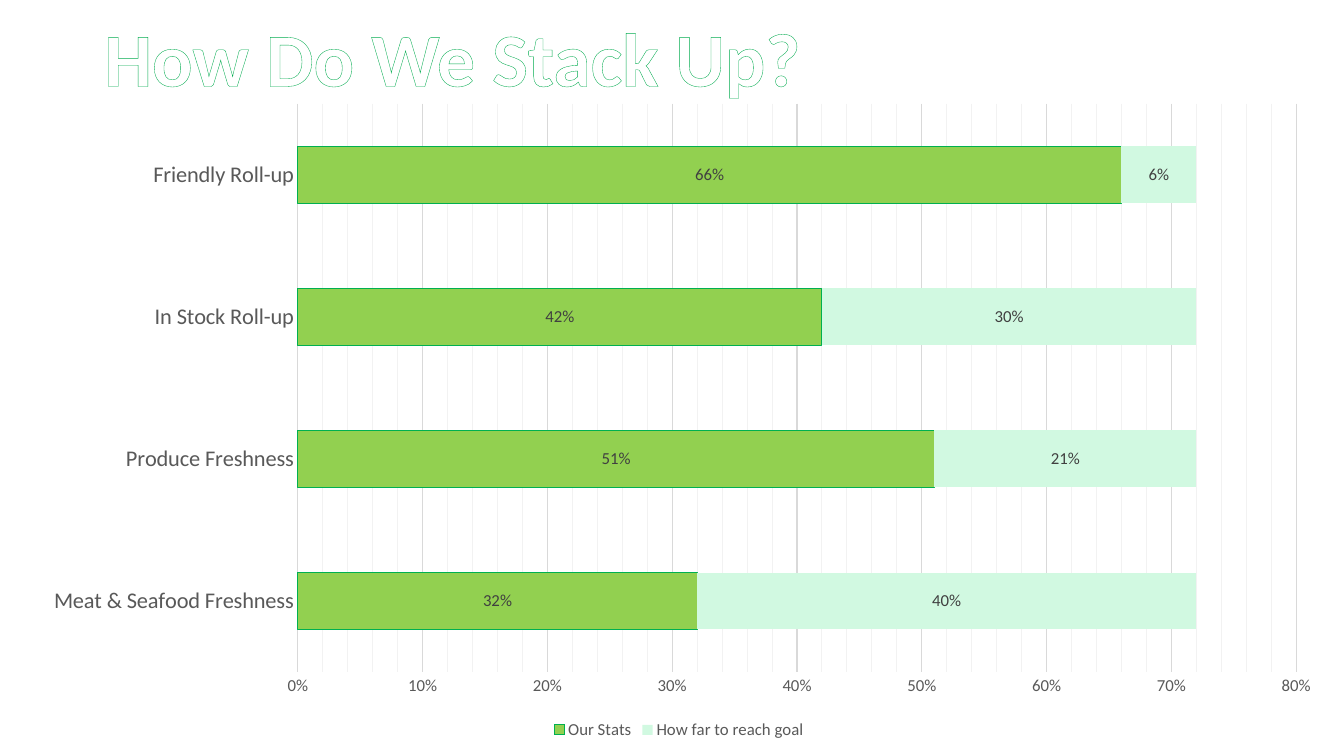
from lxml import etree
from pptx import Presentation
from pptx.chart.data import CategoryChartData
from pptx.dml.color import RGBColor
from pptx.enum.chart import XL_CHART_TYPE, XL_LABEL_POSITION, XL_LEGEND_POSITION, XL_TICK_MARK
from pptx.enum.text import MSO_ANCHOR
from pptx.oxml import parse_xml
from pptx.oxml.ns import nsdecls
from pptx.util import Pt

STACKED = XL_CHART_TYPE.BAR_STACKED
CENTER = XL_LABEL_POSITION.CENTER
BOTTOM = XL_LEGEND_POSITION.BOTTOM
NO_TICK = XL_TICK_MARK.NONE
MIDDLE = MSO_ANCHOR.MIDDLE

CATS = ["Meat & Seafood Freshness", "Produce Freshness", "In Stock Roll-up", "Friendly Roll-up"]
# name, values, fill, line
SERIES = [
    ("Our Stats", (0.32, 0.51, 0.42, 0.66), "92D050", "00B050"),
    ("How far to reach goal", (0.4, 0.21, 0.3, 0.06), "D1F9E1", None),
]
PLOT = {"x": 0.21, "y": 0.02, "w": 0.76, "h": 0.87}


def color(text):
    return RGBColor.from_string(text)


def solid(text):
    return f'<a:solidFill><a:srgbClr val="{text}"/></a:solidFill>'


class Deck:
    font = "Calibri"
    gray = "595959"
    dark = "404040"
    grid = "D9D9D9"
    faint = "F2F2F2"

    def __init__(self, slide):
        self.slide = slide

    def style(self, font, size, tint):
        font.name = self.font
        font.size = Pt(size)
        font.color.rgb = color(tint)

    def title(self, box, text, size, edge, front, back):
        """Add bold text with an outline and a trellis fill."""
        frame = self.slide.shapes.add_textbox(*map(Pt, box)).text_frame
        frame.word_wrap = True
        frame.vertical_anchor = MIDDLE
        para = frame.paragraphs[0]
        para.line_spacing = 0.9
        run = para.add_run()
        run.text = text
        run.font.name = self.font
        run.font.size = Pt(size)
        run.font.bold = True
        props = run.font._element
        line = f'<a:ln {nsdecls("a")} w="{Pt(1)}">{solid(edge)}</a:ln>'
        fill = (f'<a:pattFill {nsdecls("a")} prst="trellis">'
                f'<a:fgClr><a:srgbClr val="{front}"/></a:fgClr>'
                f'<a:bgClr><a:srgbClr val="{back}"/></a:bgClr></a:pattFill>')
        for spot, xml in enumerate((line, fill)):
            props.insert(spot, parse_xml(xml))

    def chart(self, box, cats, series, plot):
        data = CategoryChartData(number_format="0%")
        data.categories = cats
        for name, vals, *_ in series:
            data.add_series(name, vals)
        chart = self.slide.shapes.add_chart(STACKED, *map(Pt, box), data).chart
        self.style(chart.font, 10, "000000")
        chart.has_title = False
        chart.has_legend = True
        chart.legend.position = BOTTOM
        chart.legend.include_in_layout = False
        self.style(chart.legend.font, 12, self.gray)
        self.bars(chart.plots[0], series)
        self.axes(chart)
        self.place(chart, plot)

    def bars(self, plot, series):
        plot.gap_width = 150
        plot.overlap = 100
        plot.vary_by_categories = False
        for bar, (_, _, fill, line) in zip(plot.series, series):
            bar.invert_if_negative = False
            bar.format.fill.solid()
            bar.format.fill.fore_color.rgb = color(fill)
            if line:
                bar.format.line.color.rgb = color(line)
                bar.format.line.width = Pt(0.75)
            else:
                bar.format.line.fill.background()
            labels = bar.data_labels
            labels.show_value = True
            labels.position = CENTER
            labels.number_format = "0%"
            labels.number_format_is_linked = False
            self.style(labels.font, 12, self.dark)

    def axes(self, chart):
        for axis, size in ((chart.category_axis, 16), (chart.value_axis, 12)):
            axis.major_tick_mark = axis.minor_tick_mark = NO_TICK
            axis.format.line.fill.background()
            self.style(axis.tick_labels.font, size, self.gray)
        axis = chart.value_axis
        axis.minimum_scale, axis.maximum_scale = 0, 0.8
        axis.major_unit, axis.minor_unit = 0.1, 0.02
        axis.tick_labels.number_format = "0%"
        axis.tick_labels.number_format_is_linked = False
        axis.has_major_gridlines = axis.has_minor_gridlines = True
        line = axis.major_gridlines.format.line
        line.color.rgb = color(self.grid)
        line.width = Pt(0.75)
        minor = chart.element.xpath(".//c:minorGridlines")[0]
        minor.append(parse_xml(
            f'<c:spPr {nsdecls("c", "a")}><a:ln w="{Pt(0.75)}">{solid(self.faint)}</a:ln></c:spPr>'))

    def place(self, chart, plot):
        """Fix the inner plot area as shares of the chart."""
        area = chart.element.xpath(".//c:plotArea")[0]
        for old in area.xpath("./c:layout"):
            area.remove(old)
        layout = parse_xml(
            f'<c:layout {nsdecls("c")}><c:manualLayout><c:layoutTarget val="inner"/>'
            '<c:xMode val="edge"/><c:yMode val="edge"/></c:manualLayout></c:layout>')
        for key, share in plot.items():
            tag = layout[0][0].tag.replace("layoutTarget", key)
            etree.SubElement(layout[0], tag).set("val", str(share))
        area.insert(0, layout)


def main():
    show = Presentation()
    show.slide_width, show.slide_height = Pt(960), Pt(540)
    deck = Deck(show.slides.add_slide(show.slide_layouts[6]))
    deck.title((67.5, 0, 828, 88.5), "How Do We Stack Up?", 54, "00AC4E", "92D050", "FFFFFF")
    deck.chart((15.8, 64.8, 938.2, 466.6), CATS, SERIES, PLOT)
    show.save("out.pptx")


if __name__ == "__main__":
    main()
